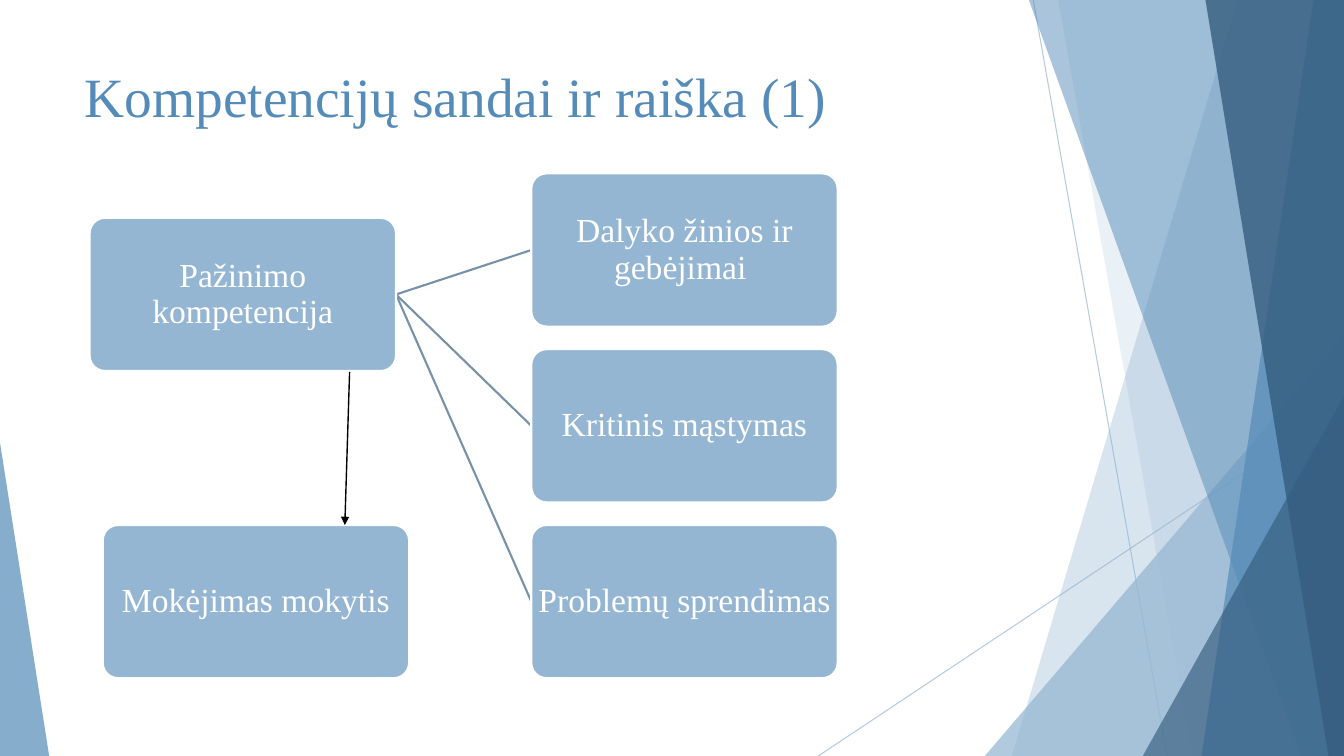
from lxml import etree
from pptx import Presentation, util as u
from pptx.dml.color import RGBColor
from pptx.enum import shapes, text
from pptx.oxml.ns import qn

COLORS = {"pale": "94B6D2", "mid": "558BB8", "dark": "355D7E",
          "link": "7792A8", "white": "FFFFFF", "black": "000000"}
FONT = "Times New Roman"
WIDTH, HEIGHT = 33.87, 19.05


def paint(fill, color, alpha=100):
    """Make a fill solid, with alpha as its opacity in percent."""
    fill.solid()
    fill.fore_color.rgb = RGBColor.from_string(COLORS[color])
    if alpha < 100:
        srgb = next(fill._xPr.iter(qn("a:srgbClr")))
        etree.SubElement(srgb, qn("a:alpha")).set("val", str(alpha * 1000))


def add_line(start, end, color, width, alpha=100):
    line = slide.shapes.add_connector(
        shapes.MSO_CONNECTOR.STRAIGHT, *(u.Cm(v) for v in start + end))
    paint(line.line.fill, color, alpha)
    line.line.width = u.Pt(width)
    etree.SubElement(line._element.spPr, qn("a:effectLst"))
    return line


deck = Presentation()
deck.slide_width, deck.slide_height = u.Cm(WIDTH), u.Cm(HEIGHT)
slide = deck.slides.add_slide(deck.slide_layouts[5])

# Background lines and translucent facets
add_line((26.04, 0), (29.41, HEIGHT), "pale", 0.75, 70)
add_line((WIDTH, 10.24), (20.62, HEIGHT), "pale", 0.75, 70)

# Bands give the left edge (top x, bottom x); triangles give left, top, width, apex
facets = [
    ("band", "pale", 36, (31.19, 25.5)),
    ("band", "pale", 20, (26.67, 30.05)),
    ("triangle", "pale", 72, (24.82, 8.46, 9.05, 1)),
    ("band", "mid", 50, (25.93, 32.79)),
    ("band", "mid", 70, (33.1, 30.28)),
    ("band", "dark", 80, (30.38, 33.48)),
    ("triangle", "dark", 66, (28.8, 9.98, 5.07, 1)),
    ("triangle", "mid", 70, (0, 11.15, 1.24, 0)),
]
for kind, color, alpha, geometry in facets:
    if kind == "band":
        top_x, bottom_x = geometry
        outline = slide.shapes.build_freeform(u.Cm(top_x), u.Cm(0))
        corners = [(WIDTH, 0), (WIDTH, HEIGHT), (bottom_x, HEIGHT)]
        outline.add_line_segments([(u.Cm(x), u.Cm(y)) for x, y in corners])
        facet = outline.convert_to_shape()
    else:
        left, top, width, apex = geometry
        facet = slide.shapes.add_shape(
            shapes.MSO_SHAPE.ISOSCELES_TRIANGLE,
            u.Cm(left), u.Cm(top), u.Cm(width), u.Cm(HEIGHT - top))
        facet.adjustments[0] = apex
    paint(facet.fill, color, alpha)
    facet.line.fill.background()
    facet.shadow.inherit = False

# Title
title = slide.shapes.title
title.left, title.top = u.Cm(1.88), u.Cm(1.27)
title.width, title.height = u.Cm(23.88), u.Cm(2.11)
title.text_frame.text = "Kompetencijų sandai ir raiška (1)"
title.text_frame.vertical_anchor = text.MSO_ANCHOR.BOTTOM
para = title.text_frame.paragraphs[0]
para.alignment = text.PP_ALIGN.LEFT
para.font.name, para.font.size = FONT, u.Pt(39.6)
paint(para.font.fill, "mid")

# Competence diagram
BOX_W, BOX_H = 7.72, 3.86
RIGHT_X, RIGHT_Y, STEP = 13.39, 4.37, 4.43
ROOT_X, ROOT_Y = 2.26, 5.49
parts = ["Dalyko žinios ir gebėjimai ", "Kritinis mąstymas", "Problemų sprendimas"]
boxes = [("Pažinimo kompetencija", ROOT_X, ROOT_Y)]
for row, label in enumerate(parts):
    y = RIGHT_Y + row * STEP
    boxes.append((label, RIGHT_X, y))
    add_line((ROOT_X + BOX_W, ROOT_Y + BOX_H / 2),
             (RIGHT_X, y + BOX_H / 2), "link", 1.5)
boxes.append(("Mokėjimas mokytis", 2.59, RIGHT_Y + 2 * STEP))

for label, x, y in boxes:
    box = slide.shapes.add_shape(
        shapes.MSO_SHAPE.ROUNDED_RECTANGLE,
        u.Cm(x), u.Cm(y), u.Cm(BOX_W), u.Cm(BOX_H))
    box.adjustments[0] = 0.1
    box.shadow.inherit = False
    paint(box.fill, "pale")
    paint(box.line.fill, "white")
    box.line.width = u.Pt(1.5)
    frame = box.text_frame
    frame.margin_left = frame.margin_right = u.Cm(0.04)
    frame.margin_top = frame.margin_bottom = u.Cm(0.04)
    frame.word_wrap = True
    frame.vertical_anchor = text.MSO_ANCHOR.MIDDLE
    frame.text = label
    para = frame.paragraphs[0]
    para.alignment = text.PP_ALIGN.CENTER
    para.line_spacing = 0.9
    para.font.name, para.font.size = FONT, u.Pt(24)
    paint(para.font.fill, "white")

arrow = add_line((8.81, 9.37), (8.69, 13.23), "black", 1)
etree.SubElement(arrow.line._get_or_add_ln(), qn("a:tailEnd")).set("type", "triangle")

deck.save("out.pptx")
